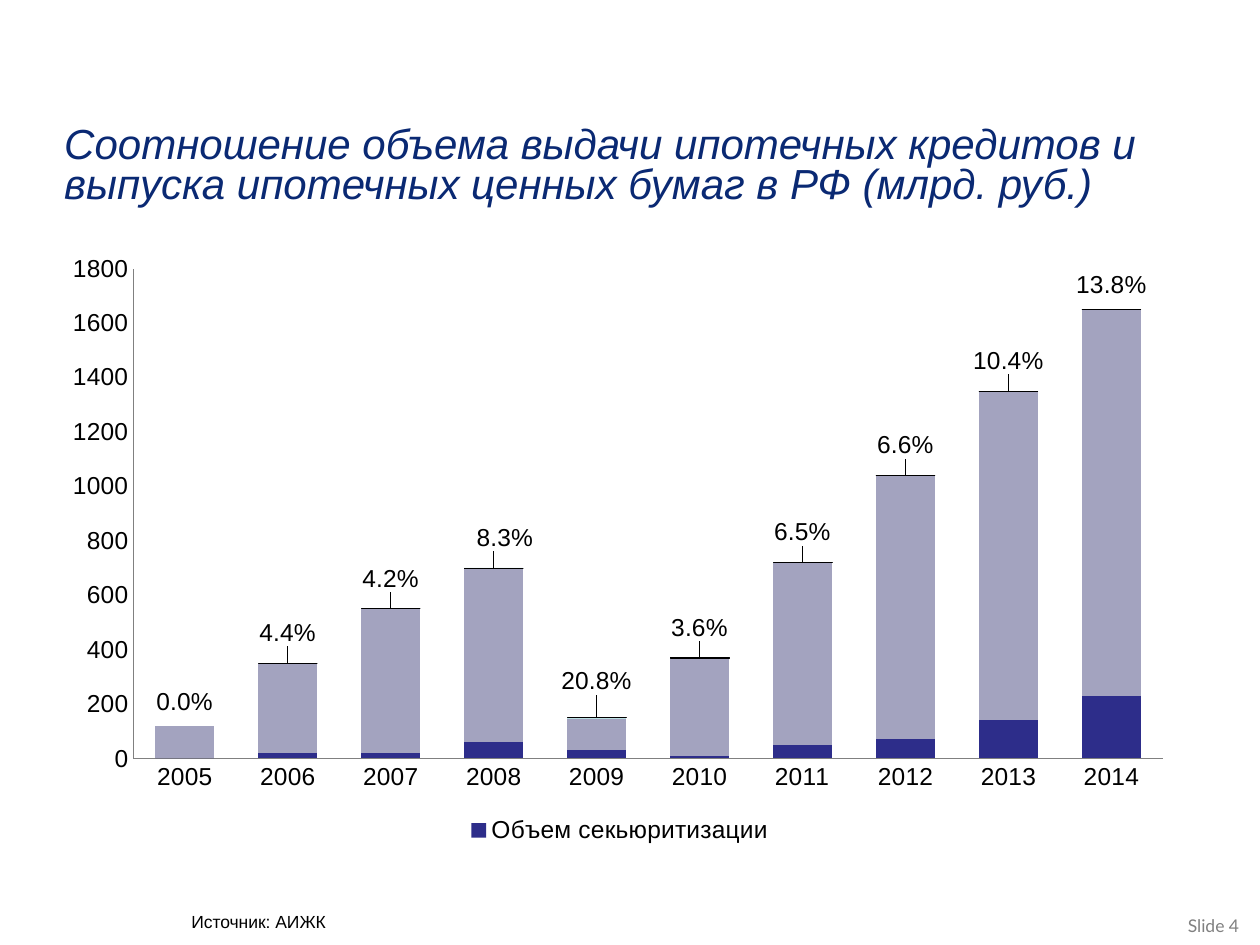
from lxml.etree import SubElement
from pptx import Presentation
from pptx.chart.data import CategoryChartData
from pptx.dml.color import RGBColor
from pptx.enum.chart import XL_CHART_TYPE, XL_LEGEND_POSITION, XL_TICK_MARK
from pptx.enum.text import MSO_ANCHOR
from pptx.oxml import parse_xml
from pptx.oxml.ns import nsdecls, qn
from pptx.util import Inches, Pt

TEXTS = [
    dict(text="Соотношение объема выдачи ипотечных кредитов и выпуска "
              "ипотечных ценных бумаг в РФ (млрд. руб.)",
         at=(0.51, 0.98, 9.49, 0.7), size=24, font="Arial", color="0A2973", title=True),
    dict(text="Источник: АИЖК", at=(1.42, 7.18, 1.33, 0.27),
         size=10, font="Arial", color="000000", wrap=False),
    dict(text="Slide 4", at=(9.33, 7.21, 0.87, 0.4),
         size=10, font="Lato", color="808080"),
]
YEARS = [str(year) for year in range(2005, 2015)]
SERIES = [
    ("Объем секьюритизации", "2D2D8A", "General",
     [0, 20, 20, 60, 30, 10, 50, 70, 140, 230]),
    ("Series 2", "A3A3BF", "General",
     [120, 330, 530, 640, 120, 360, 670, 970, 1210, 1420]),
    ("Series 3", "BBE0E3", "0.0%",
     [0, 0.044, 0.042, 0.083, 0.208, 0.036, 0.065, 0.066, 0.104, 0.138]),
]
SHIFTS = [(0, -0.04), (0, -0.05), (0, -0.05), (0.01, -0.05), (0, -0.06),
          (0, -0.05), (0, -0.05), (0, -0.05), (0, -0.05), (0, -0.04)]
PLOT = dict(x=0.07, y=0.04, w=0.91, h=0.81)


def rgb(code):
    return RGBColor.from_string(code)


def add_text(slide, text, at, size, font, color, title=False, wrap=True):
    frame = slide.shapes.add_textbox(*map(Inches, at)).text_frame
    frame.word_wrap = wrap
    para = frame.paragraphs[0]
    if title:
        frame.margin_left = frame.margin_right = 0
        frame.margin_top = frame.margin_bottom = 0
        frame.vertical_anchor = MSO_ANCHOR.MIDDLE
        para.line_spacing = 0.8
    run = para.add_run()
    run.text = text
    run.font.size, run.font.name = Pt(size), font
    run.font.italic = title
    run.font.color.rgb = rgb(color)


def make_layout(inner=False, **parts):
    layout = parse_xml(f"<c:layout {nsdecls('c')}/>")
    manual = SubElement(layout, qn("c:manualLayout"))
    if inner:
        SubElement(manual, qn("c:layoutTarget")).set("val", "inner")
        for mode in ("xMode", "yMode"):
            SubElement(manual, qn(f"c:{mode}")).set("val", "edge")
    for key, share in parts.items():
        SubElement(manual, qn(f"c:{key}")).set("val", str(share))
    return layout


def set_font(font):
    font.size, font.name = Pt(14), "Arial"
    font.color.rgb = rgb("000000")


def add_labels(series):
    for index, (x, y) in enumerate(SHIFTS):
        set_font(series.points[index].data_label.font)
    labels = series._element.findall(".//" + qn("c:dLbl"))
    for label, (x, y) in zip(labels, SHIFTS):
        form = parse_xml(f'<c:numFmt {nsdecls("c")} formatCode="0.0%" sourceLinked="0"/>')
        label.find(qn("c:idx")).addnext(form)
        form.addprevious(make_layout(x=x, y=y))


def add_bars(slide):
    data = CategoryChartData()
    data.categories = YEARS
    for name, color, form, values in SERIES:
        data.add_series(name, values, number_format=form)
    chart = slide.shapes.add_chart(
        XL_CHART_TYPE.COLUMN_STACKED,
        *map(Inches, (0.43, 1.94, 8.98, 4.8)), data).chart
    set_font(chart.font)
    chart.has_title = False

    plot = chart.plots[0]
    plot.gap_width, plot.overlap = 75, 100
    plot.vary_by_categories = False
    for series, (name, color, form, values) in zip(plot.series, SERIES):
        series.format.fill.solid()
        series.format.fill.fore_color.rgb = rgb(color)
    share = plot.series[2]
    share.format.line.color.rgb = rgb("000000")
    share.format.line.width = Pt(0.25)
    add_labels(share)

    for axis in (chart.category_axis, chart.value_axis):
        axis.major_tick_mark = axis.minor_tick_mark = XL_TICK_MARK.NONE
        axis.has_major_gridlines = False
        axis.format.line.color.rgb = rgb("808080")
    value = chart.value_axis
    value.minimum_scale, value.maximum_scale, value.major_unit = 0, 1800, 200
    value.tick_labels.number_format = "General"
    value.tick_labels.number_format_is_linked = False

    chart.has_legend = True
    legend = chart.legend
    legend.position = XL_LEGEND_POSITION.BOTTOM
    legend.include_in_layout = False
    place = legend._element.find(qn("c:legendPos"))
    for index in (2, 1):
        place.addnext(parse_xml(
            f'<c:legendEntry {nsdecls("c")}><c:idx val="{index}"/>'
            '<c:delete val="1"/></c:legendEntry>'))

    area = plot._element.getparent()
    for old in area.findall(qn("c:layout")):
        area.remove(old)
    area.insert(0, make_layout(inner=True, **PLOT))


def main():
    deck = Presentation()
    deck.slide_width, deck.slide_height = Inches(10), Inches(7.5)
    slide = deck.slides.add_slide(deck.slide_layouts[6])
    for item in TEXTS:
        add_text(slide, **item)
    add_bars(slide)
    deck.save("out.pptx")


if __name__ == "__main__":
    main()
